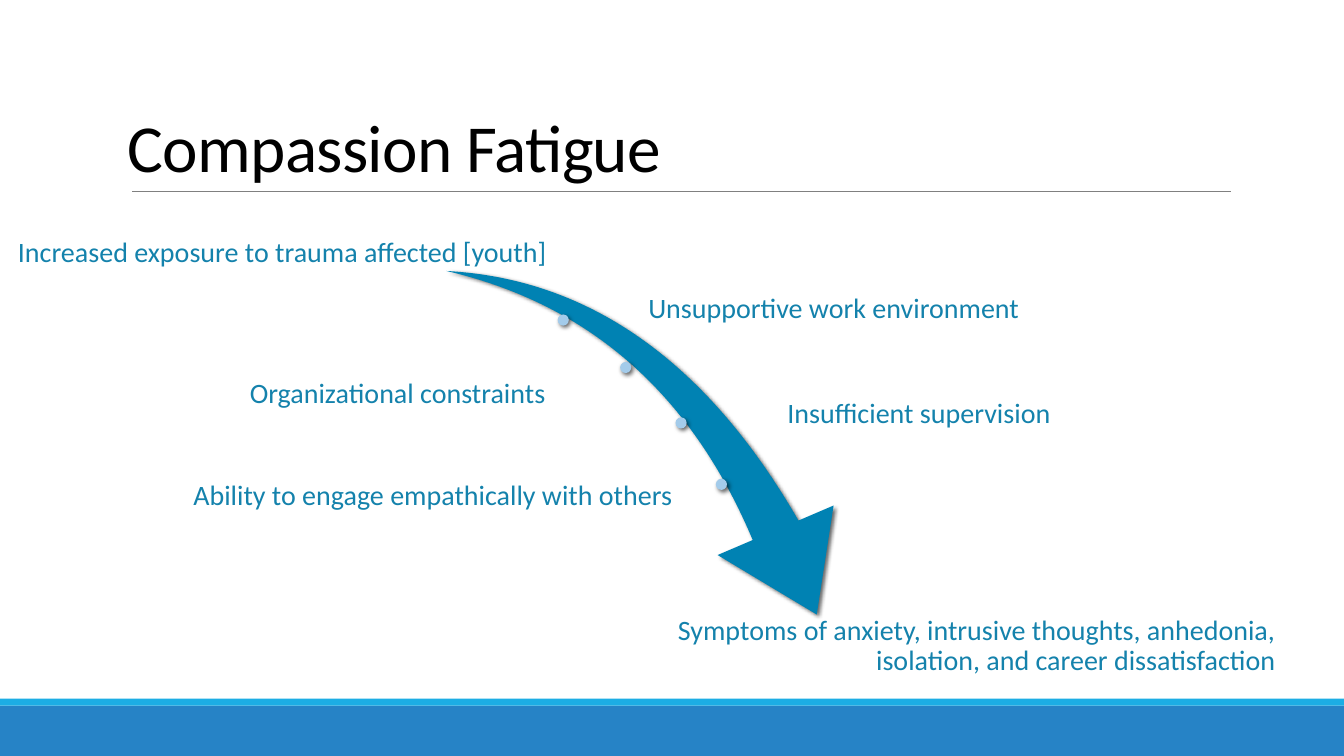
from lxml import etree
from pptx import Presentation
from pptx import util as u
from pptx.dml.color import RGBColor
from pptx.enum import shapes, text
from pptx.oxml import parse_xml
from pptx.oxml.ns import nsdecls, qn

COLORS = {
    "band": "2683C6", "strip": "1CADE4", "rule": "808080", "title": "000000",
    "arrow": "0082B3", "dot": "A3CBEA", "label": "1482AC", "shadow": "000000",
}
LEFT, CENTER, RIGHT = text.PP_ALIGN.LEFT, text.PP_ALIGN.CENTER, text.PP_ALIGN.RIGHT
TOP, MIDDLE, BOTTOM = text.MSO_ANCHOR.TOP, text.MSO_ANCHOR.MIDDLE, text.MSO_ANCHOR.BOTTOM


class Deck:
    """Holds the style and the current slide; lengths are percent of its size."""

    font = "Calibri"

    def __init__(self):
        self.prs = Presentation()
        self.prs.slide_width, self.prs.slide_height = u.Inches(13.33), u.Inches(7.5)
        self.s = self.prs.slides.add_slide(self.prs.slide_layouts[6])

    def x(self, share):
        return round(self.prs.slide_width * share / 100)

    def y(self, share):
        return round(self.prs.slide_height * share / 100)

    def box(self, left, top, width, height):
        return self.x(left), self.y(top), self.x(width), self.y(height)

    def color(self, name):
        return RGBColor.from_string(COLORS[name])

    def shape(self, kind, box, color, shadow=False):
        sp = self.s.shapes.add_shape(kind, *box)
        sp.fill.solid()
        sp.fill.fore_color.rgb = self.color(color)
        sp.line.fill.background()
        sp.shadow.inherit = False
        if shadow:
            effects = sp._element.spPr.find(qn("a:effectLst"))
            effects.append(parse_xml(
                f'<a:outerShdw {nsdecls("a")} blurRad="{u.Pt(3)}" dist="{u.Pt(2)}" '
                f'dir="2700000" rotWithShape="0"><a:srgbClr val="{COLORS["shadow"]}">'
                '<a:alpha val="60000"/></a:srgbClr></a:outerShdw>'))
        return sp

    def arrow(self, box, rotation, adjustments):
        sp = self.shape(shapes.MSO_SHAPE.SWOOSH_ARROW, box, "arrow", shadow=True)
        sp.rotation = rotation
        for i, value in enumerate(adjustments):
            sp.adjustments[i] = value

    def dot(self, left, top):
        size = self.x(0.83)
        self.shape(shapes.MSO_SHAPE.OVAL, (self.x(left), self.y(top), size, size),
                   "dot", shadow=True)

    def rule(self, left, right, top):
        line = self.s.shapes.add_connector(
            shapes.MSO_CONNECTOR.STRAIGHT,
            self.x(left), self.y(top), self.x(right), self.y(top))
        line.line.color.rgb = self.color("rule")
        line.line.width = u.Pt(0.5)
        etree.SubElement(line._element.spPr, qn("a:effectLst"))

    def text_box(self, words, box, size, color, align, anchor, spacing):
        """Add a wrapped one-paragraph text box."""
        tf = self.s.shapes.add_textbox(*box).text_frame
        tf.word_wrap = True
        tf.vertical_anchor = anchor
        tf.text = words
        p = tf.paragraphs[0]
        p.alignment, p.line_spacing = align, spacing
        r = p.runs[0]
        r.font.name, r.font.size = self.font, u.Pt(size)
        r.font.color.rgb = self.color(color)
        return tf

    def title(self, words, box):
        tf = self.text_box(words, box, 48, "title", LEFT, BOTTOM, 0.85)
        tf.paragraphs[0].runs[0].font._element.set("spc", "-50")

    def label(self, words, box, align, anchor=MIDDLE):
        tf = self.text_box(words, box, 20, "label", align, anchor, 0.9)
        tf.margin_left = tf.margin_right = u.Inches(0.03)
        tf.margin_top = tf.margin_bottom = u.Inches(0.03)


def main():
    d = Deck()
    d.shape(shapes.MSO_SHAPE.RECTANGLE, d.box(0, 93.33, 100, 6.67), "band")
    d.shape(shapes.MSO_SHAPE.RECTANGLE, d.box(0, 92.4, 100, 0.93), "strip")
    d.rule(9.83, 91.6, 25.33)
    d.title("Compassion Fatigue", d.box(8.78, 5.07, 82.52, 20.27))

    d.arrow(d.box(32.48, 37.6, 32.41, 40.13), 73.3, (0.163, 0.314))
    for left, top in ((41.49, 41.6), (46.14, 47.87), (50.26, 55.2), (53.26, 63.33)):
        d.dot(left, top)

    d.label("Increased exposure to trauma affected [youth]",
            d.box(0.6, 28.8, 40.81, 7.07), CENTER, BOTTOM)
    d.label("Unsupportive work environment", d.box(48.01, 37.07, 31.96, 7.6), LEFT)
    d.label("Organizational constraints", d.box(14.78, 49.33, 26.03, 5.6), RIGHT)
    d.label("Insufficient supervision", d.box(58.36, 51.87, 28.81, 5.87), LEFT)
    d.label("Ability to engage empathically with others",
            d.box(11.1, 62.67, 39.16, 5.87), RIGHT)
    d.label("Symptoms of anxiety, intrusive thoughts, anhedonia, "
            "isolation, and career dissatisfaction",
            d.box(49.06, 81.07, 46.06, 10), RIGHT, TOP)
    d.prs.save("out.pptx")


if __name__ == "__main__":
    main()
